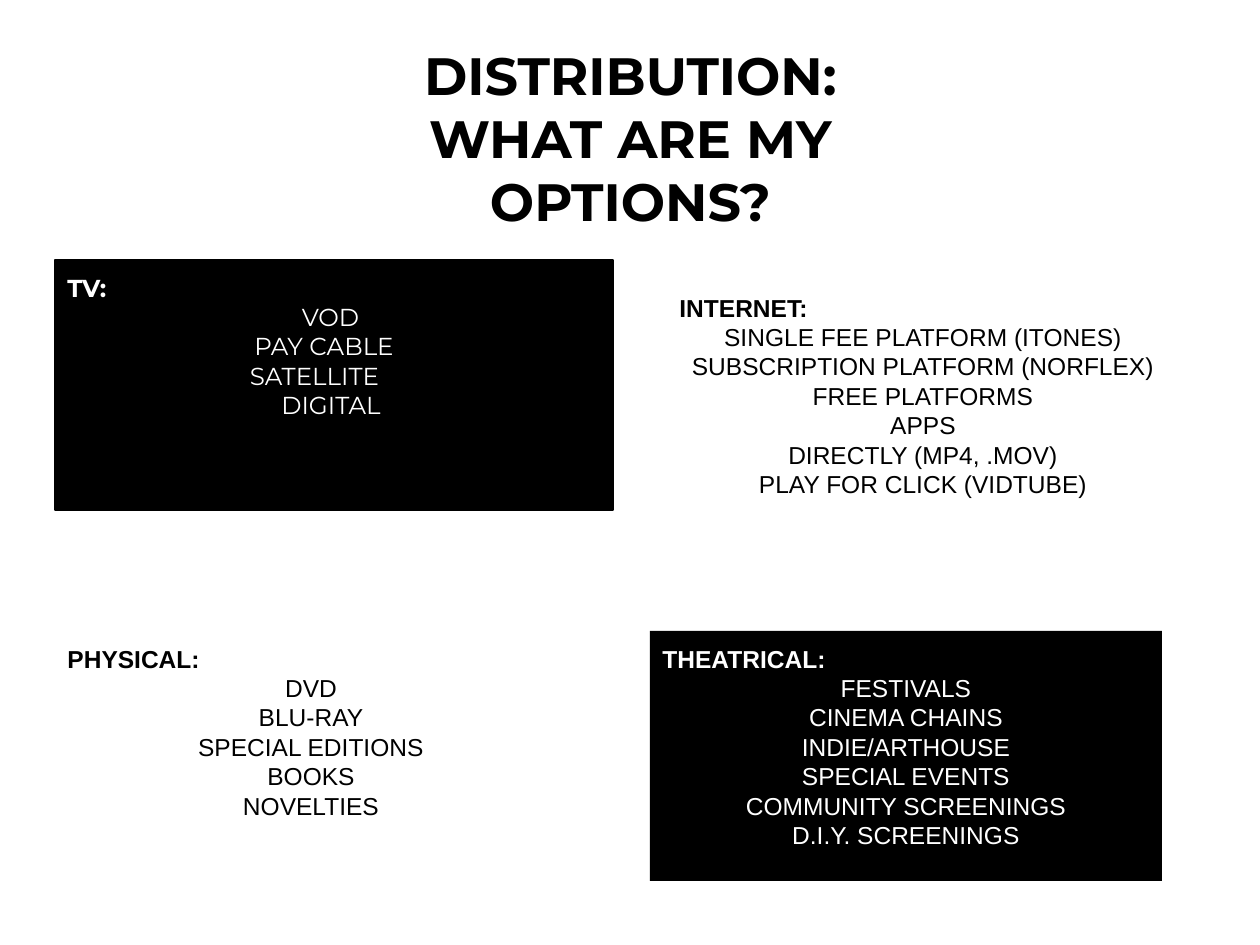
from pptx import Presentation
from pptx.dml.color import RGBColor
from pptx.enum.shapes import MSO_SHAPE as Shape
from pptx.enum.text import MSO_ANCHOR as Anchor, PP_ALIGN as Align
from pptx.util import Emu, Inches, Pt

COLORS = {"black": "000000", "white": "FFFFFF"}
PX_PER_INCH = 126
LEADING = 1.2


def px(length):
    return Emu(round(length * 914400 / PX_PER_INCH))


def color(name):
    return RGBColor.from_string(COLORS[name])


def prepare_frame(holder):
    frame = holder.text_frame
    frame.word_wrap = True
    frame.vertical_anchor = Anchor.TOP
    frame.margin_left = frame.margin_right = Inches(0.1)
    frame.margin_top = frame.margin_bottom = Inches(0.1)
    return frame


def style_line(line, size, font, ink, bold=False, align=Align.CENTER):
    line.alignment = align
    line.line_spacing = Pt(size * LEADING)
    line.font.size = Pt(size)
    line.font.name = font
    line.font.bold = bold
    line.font.color.rgb = color(ink)


def add_title(slide, text, box):
    title = prepare_frame(slide.shapes.add_textbox(*map(px, box)))
    title.text = text
    style_line(title.paragraphs[0], 30, "Montserrat", "black", bold=True)


def add_panel(slide, box):
    panel = slide.shapes.add_shape(Shape.RECTANGLE, *map(px, box))
    panel.shadow.inherit = False
    panel.fill.solid()
    panel.fill.fore_color.rgb = color("black")
    panel.line.fill.background()
    return panel


def add_category(slide, heading, options, box, font="Arial", dark=False):
    """Each option is a text with the right indent, in px, that shifts it."""
    if dark:
        holder, ink = add_panel(slide, box), "white"
    else:
        holder, ink = slide.shapes.add_textbox(*map(px, box)), "black"
    frame = prepare_frame(holder)
    frame.text = heading
    style_line(frame.paragraphs[0], 14, font, ink, bold=True, align=Align.LEFT)
    for text, indent in options:
        option = frame.add_paragraph()
        option.text = text
        style_line(option, 14, font, ink)
        if indent:
            option._p.get_or_add_pPr().set("marR", str(px(indent)))
    return holder


def centered(*texts):
    return [(text, 0) for text in texts]


def main():
    prs = Presentation()
    prs.slide_width, prs.slide_height = px(1260), px(945)
    slide = prs.slides.add_slide(prs.slide_layouts[6])

    add_title(slide, "DISTRIBUTION:\vWHAT ARE MY OPTIONS?", (333, 30, 595, 228))

    # Top row
    tv = add_category(
        slide, "TV:",
        [("VOD", 7), ("PAY CABLE", 20), ("SATELLITE", 39), ("DIGITAL", 6)],
        (55, 260, 558, 250), font="Montserrat", dark=True)
    tv.line.color.rgb = color("black")
    tv.line.width = Pt(0.75)
    add_category(
        slide, "INTERNET:",
        centered("SINGLE FEE PLATFORM (ITONES)", "SUBSCRIPTION PLATFORM (NORFLEX)",
                 "FREE PLATFORMS", "APPS", "DIRECTLY (MP4, .MOV)",
                 "PLAY FOR CLICK (VIDTUBE)"),
        (667, 280, 512, 250))

    # Bottom row
    add_category(
        slide, "PHYSICAL:",
        centered("DVD", "BLU-RAY", "SPECIAL EDITIONS", "BOOKS", "NOVELTIES"),
        (55, 631, 512, 250))
    add_category(
        slide, "THEATRICAL:",
        centered("FESTIVALS", "CINEMA CHAINS", "INDIE/ARTHOUSE", "SPECIAL EVENTS",
                 "COMMUNITY SCREENINGS", "D.I.Y. SCREENINGS"),
        (650, 631, 512, 250), dark=True)

    prs.save("out.pptx")


if __name__ == "__main__":
    main()
